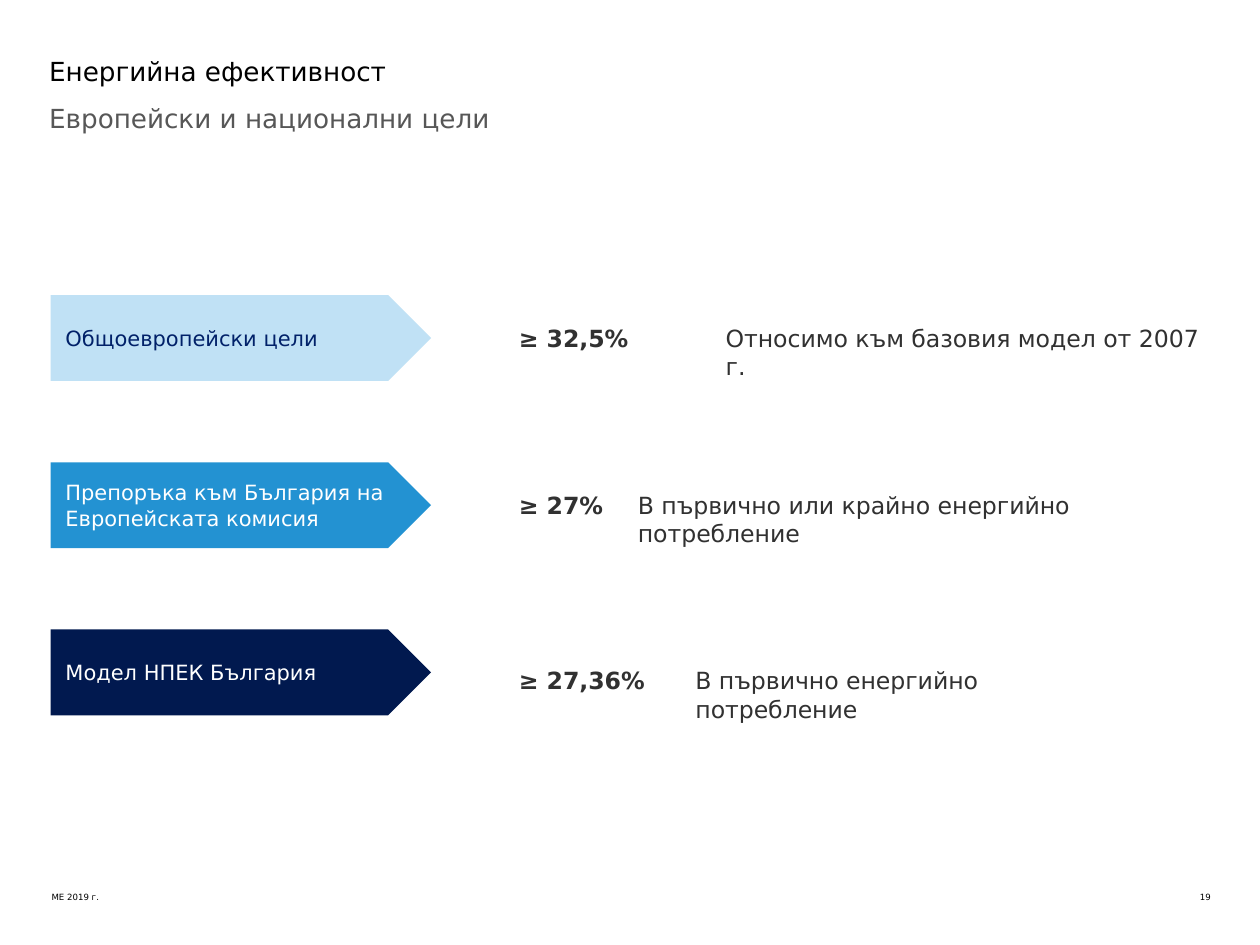
from dataclasses import dataclass

from pptx import Presentation
from pptx.dml.color import RGBColor
from pptx.enum.shapes import MSO_SHAPE as Shape
from pptx.enum.text import MSO_ANCHOR as Anchor, MSO_AUTO_SIZE as AutoSize, PP_ALIGN as Align
from pptx.oxml.xmlchemy import OxmlElement
from pptx.util import Cm, Pt

FONT = "DejaVu Sans"
BLACK, GREY, DARK_GREY, WHITE, NAVY = "000000", "575757", "313131", "FFFFFF", "012169"


@dataclass
class Box:
    """A rectangle in centimetres."""
    left: float
    top: float
    width: float
    height: float

    def inner(self, left, top, width, height):
        """Return a box placed relative to this one."""
        return Box(self.left + left, self.top + top, width, height)

    def lengths(self):
        """Return left, top, width and height as lengths."""
        return [Cm(value) for value in (self.left, self.top, self.width, self.height)]


def colour(value):
    """Turn a hex string into a colour."""
    return RGBColor.from_string(value)


def write(shape, text, size, color, bold=False, align=Align.LEFT, anchor=Anchor.TOP,
          margins=(0, 0, 0, 0), wrap=True):
    """Put one formatted paragraph into a shape."""
    frame = shape.text_frame
    frame.text = text
    frame.auto_size = AutoSize.NONE
    frame.word_wrap = wrap
    frame.vertical_anchor = anchor
    (frame.margin_left, frame.margin_top,
     frame.margin_right, frame.margin_bottom) = [Cm(margin) for margin in margins]
    paragraph = frame.paragraphs[0]
    paragraph.alignment = align
    paragraph.space_before = Pt(0)
    font = paragraph.runs[0].font
    font.name, font.size, font.bold = FONT, Pt(size), bold
    font.color.rgb = colour(color)
    return paragraph


def place(shape, box):
    """Move a placeholder to a box."""
    shape.left, shape.top, shape.width, shape.height = box.lengths()


def add_text(slide, box, text, **text_format):
    """Add a text box."""
    write(slide.shapes.add_textbox(*box.lengths()), text, **text_format)


def add_heading(slide, box):
    """Fill the title and subtitle placeholders."""
    title, subtitle = slide.shapes.title, slide.placeholders[1]
    place(title, box.inner(0, 0, box.width, 0.94))
    write(title, "Енергийна ефективност", size=15, color=BLACK)
    place(subtitle, box.inner(0, 0.94, box.width, 2.11))
    paragraph = write(subtitle, "Европейски и национални цели", size=15, color=GREY)
    properties = paragraph._p.get_or_add_pPr()
    properties.set("marL", "0")
    properties.set("indent", "0")
    properties.append(OxmlElement("a:buNone"))


def add_target(slide, box, label, fill, label_color, figure, note, text_top, note_left, note_width):
    """Add an arrow label with its target figure and note."""
    arrow = slide.shapes.add_shape(Shape.PENTAGON, *box.inner(0, 0, 7.67, box.height).lengths())
    arrow.shadow.inherit = False
    arrow.fill.solid()
    arrow.fill.fore_color.rgb = colour(fill)
    arrow.line.fill.background()
    write(arrow, label, size=12, color=label_color, anchor=Anchor.MIDDLE,
          margins=(0.3, 0.18, 0.18, 0.18))
    add_text(slide, box.inner(9.44, text_top, 2.8, 0.58), figure,
             size=13.5, color=DARK_GREY, bold=True, wrap=False)
    add_text(slide, box.inner(note_left, text_top, note_width, 0.58), note,
             size=13.5, color=DARK_GREY)


def add_targets(slide, box, targets):
    """Stack the target rows at an equal pitch."""
    pitch = 3.37
    for index, target in enumerate(targets):
        add_target(slide, box.inner(0, index * pitch, box.width, 1.73), *target)


def add_footer(slide, box):
    """Add the footer line and the page number."""
    add_text(slide, box.inner(0, 0, 11.15, 0.56), "МЕ 2019 г.", size=4.9, color=BLACK)
    add_text(slide, box.inner(box.width - 0.64, 0, 0.64, 0.2), "19",
             size=4.9, color=BLACK, align=Align.RIGHT)


def main():
    """Build and save the slide."""
    presentation = Presentation()
    presentation.slide_width, presentation.slide_height = Cm(25.4), Cm(19.05)
    slide = presentation.slides.add_slide(presentation.slide_layouts[1])
    targets = [
        ("Общоевропейски цели", "C0E1F5", NAVY, "≥ 32,5%",
         "Относимо към базовия модел от 2007 г.", 0.58, 13.61, 9.85),
        ("Препоръка към България на Европейската комисия", "2392D2", WHITE, "≥ 27%",
         "В първично или крайно енергийно потребление", 0.57, 11.84, 11.9),
        ("Модел НПЕК България", "01194F", WHITE, "≥ 27,36%",
         "В първично енергийно потребление", 0.74, 13.0, 8.9),
    ]
    add_heading(slide, Box(0.99, 1.12, 23.44, 3.05))
    add_targets(slide, Box(1.02, 5.95, 23.4, 8.47), targets)
    add_footer(slide, Box(1.04, 17.98, 23.37, 0.56))
    presentation.save("out.pptx")


if __name__ == "__main__":
    main()
